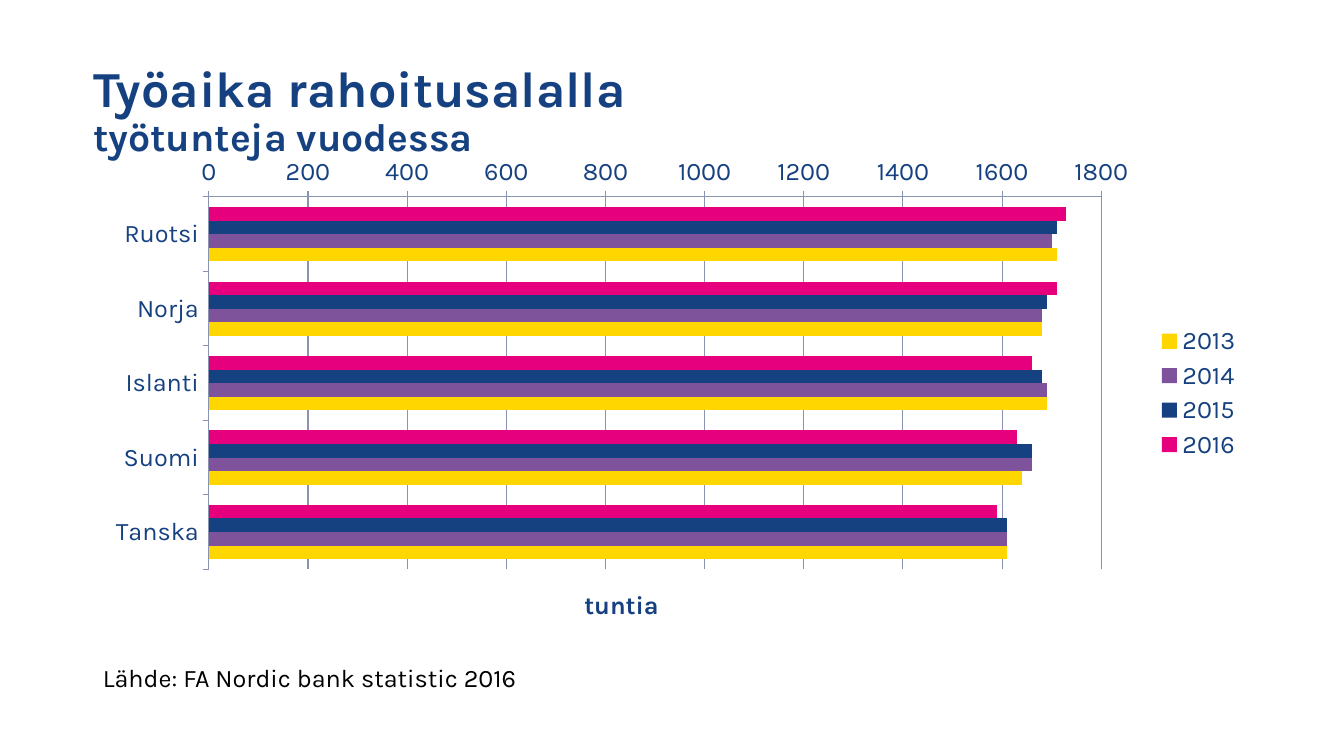
from copy import deepcopy
from dataclasses import dataclass

from lxml import etree
from pptx import Presentation
from pptx.chart.data import CategoryChartData
from pptx.dml.color import RGBColor
from pptx.enum.chart import XL_CHART_TYPE, XL_LEGEND_POSITION, XL_TICK_MARK
from pptx.enum.text import MSO_ANCHOR, MSO_AUTO_SIZE, PP_ALIGN
from pptx.oxml.ns import qn
from pptx.util import Emu, Pt

BAR_CLUSTERED = XL_CHART_TYPE.BAR_CLUSTERED
LEGEND_RIGHT = XL_LEGEND_POSITION.RIGHT
TICK_OUTSIDE, TICK_NONE = XL_TICK_MARK.OUTSIDE, XL_TICK_MARK.NONE
MIDDLE, LEFT = MSO_ANCHOR.MIDDLE, PP_ALIGN.LEFT
NO_AUTOFIT, GROW = MSO_AUTO_SIZE.NONE, MSO_AUTO_SIZE.SHAPE_TO_FIT_TEXT
TITLE_ONLY = 5
PX_PER_INCH = 100.8


@dataclass(frozen=True)
class Theme:
    font: str = "Karla"
    navy: str = "164180"
    black: str = "000000"
    grid: str = "8A93B0"
    title_size: int = 36
    subtitle_size: int = 28
    body_size: int = 18
    line_width: float = 0.75


@dataclass(frozen=True)
class Box:
    left: int
    top: int
    width: int
    height: int

    def emu(self) -> tuple[Emu, ...]:
        return tuple(px(n) for n in (self.left, self.top, self.width, self.height))


@dataclass(frozen=True)
class YearSeries:
    year: str
    color: str
    hours: tuple[int, ...]


THEME = Theme()
TITLE_BOX = Box(83, 39, 1159, 146)
CHART_BOX = Box(93, 148, 1159, 490)
SOURCE_BOX = Box(93, 657, 626, 40)
COUNTRIES = ("Ruotsi", "Norja", "Islanti", "Suomi", "Tanska")
YEARS = (
    YearSeries("2016", "E6007E", (1730, 1710, 1660, 1630, 1590)),
    YearSeries("2015", "164180", (1710, 1690, 1680, 1660, 1610)),
    YearSeries("2014", "7F539C", (1700, 1680, 1690, 1660, 1610)),
    YearSeries("2013", "FFD600", (1710, 1680, 1690, 1640, 1610)),
)


def px(length: int) -> Emu:
    return Emu(round(length * 914400 / PX_PER_INCH))


def style_font(font, size: int, color: str, bold: bool = False) -> None:
    font.name = THEME.font
    font.size = Pt(size)
    font.bold = bold
    font.color.rgb = RGBColor.from_string(color)


def add_run(paragraph, text: str, size: int, color: str, bold: bool = False):
    run = paragraph.add_run()
    run.text = text
    style_font(run.font, size, color, bold)
    return run


def style_line(line) -> None:
    line.color.rgb = RGBColor.from_string(THEME.grid)
    line.width = Pt(THEME.line_width)


def set_layout(parent, **values: float) -> None:
    """Place a chart part by fractions of the chart's size."""
    layout = parent.find(qn("c:layout"))
    if layout is None:
        layout = etree.Element(qn("c:layout"))
        text = parent.find(qn("c:tx"))
        parent.insert(0 if text is None else parent.index(text) + 1, layout)
    for child in list(layout):
        layout.remove(child)
    manual = etree.SubElement(layout, qn("c:manualLayout"))
    if "w" in values:
        etree.SubElement(manual, qn("c:layoutTarget"), val="inner")
    for mode in ("xMode", "yMode"):
        etree.SubElement(manual, qn(f"c:{mode}"), val="edge")
    for name, value in values.items():
        etree.SubElement(manual, qn(f"c:{name}"), val=str(value))


def add_title(slide) -> None:
    title = slide.shapes.title
    title.left, title.top, title.width, title.height = TITLE_BOX.emu()
    frame = title.text_frame
    frame.word_wrap = True
    frame.auto_size = NO_AUTOFIT
    frame.vertical_anchor = MIDDLE
    paragraph = frame.paragraphs[0]
    paragraph.alignment = LEFT
    paragraph.line_spacing = 0.9
    heading = add_run(paragraph, "Työaika rahoitusalalla", THEME.title_size, THEME.navy, True)
    paragraph.add_line_break()
    # The break takes the heading's size
    line_break = paragraph._p.find(qn("a:br"))
    line_break.append(deepcopy(heading._r.find(qn("a:rPr"))))
    add_run(paragraph, "työtunteja vuodessa", THEME.subtitle_size, THEME.navy, True)


def add_hours_chart(slide) -> None:
    data = CategoryChartData()
    data.categories = COUNTRIES
    for series in YEARS:
        data.add_series(series.year, series.hours)
    chart = slide.shapes.add_chart(BAR_CLUSTERED, *CHART_BOX.emu(), data).chart
    chart.has_title = False
    style_font(chart.font, THEME.body_size, THEME.navy)

    # Bars
    plot = chart.plots[0]
    plot.gap_width = 150
    plot.overlap = 0
    plot.vary_by_categories = False
    for bars, series in zip(plot.series, YEARS):
        bars.format.fill.solid()
        bars.format.fill.fore_color.rgb = RGBColor.from_string(series.color)

    # Axes
    for axis in (chart.category_axis, chart.value_axis):
        axis.major_tick_mark = TICK_OUTSIDE
        axis.minor_tick_mark = TICK_NONE
        style_line(axis.format.line)
    chart.category_axis.reverse_order = True
    hours_axis = chart.value_axis
    hours_axis.minimum_scale = 0
    hours_axis.maximum_scale = 1800
    hours_axis.major_unit = 200
    hours_axis.has_major_gridlines = True
    style_line(hours_axis.major_gridlines.format.line)
    hours_axis.tick_labels.number_format = "General"
    hours_axis.tick_labels.number_format_is_linked = False
    paragraph = hours_axis.axis_title.text_frame.paragraphs[0]
    add_run(paragraph, "tuntia", THEME.body_size, THEME.navy, True)

    # Legend and placement
    chart.has_legend = True
    chart.legend.position = LEGEND_RIGHT
    chart.legend.include_in_layout = False
    style_font(chart.legend.font, THEME.body_size, THEME.navy)
    plot_area = chart._chartSpace.find(".//" + qn("c:plotArea"))
    set_layout(plot_area, x=0.1, y=0.1, w=0.77, h=0.76)
    set_layout(hours_axis.axis_title._element, x=0.42, y=0.89)


def add_source(slide) -> None:
    frame = slide.shapes.add_textbox(*SOURCE_BOX.emu()).text_frame
    frame.word_wrap = True
    frame.auto_size = GROW
    add_run(frame.paragraphs[0], "Lähde: FA Nordic bank statistic 2016", THEME.body_size, THEME.black)


def main() -> None:
    presentation = Presentation()
    presentation.slide_width, presentation.slide_height = px(1344), px(756)
    slide = presentation.slides.add_slide(presentation.slide_layouts[TITLE_ONLY])
    add_title(slide)
    add_hours_chart(slide)
    add_source(slide)
    presentation.save("out.pptx")


if __name__ == "__main__":
    main()
